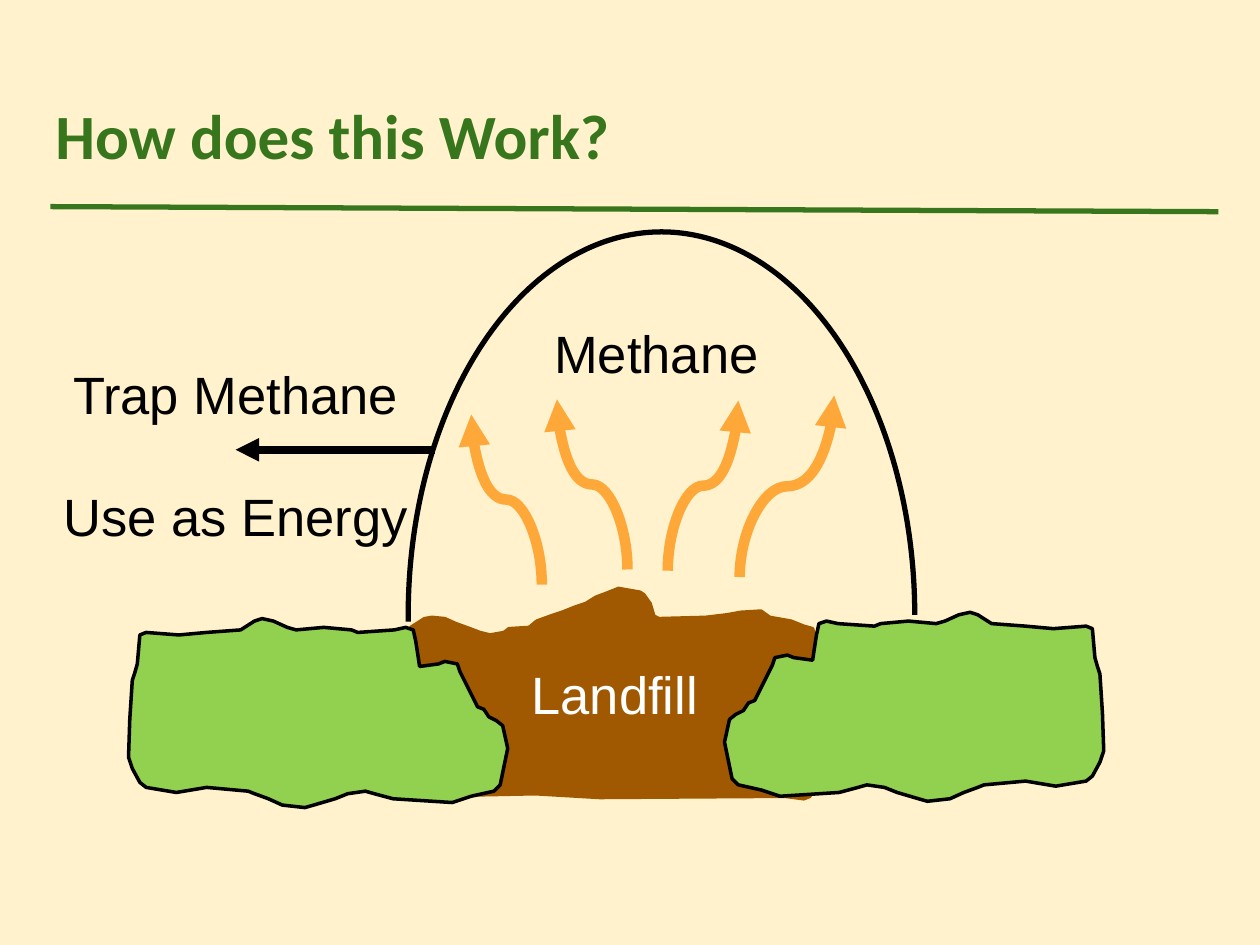
import pptx
import pptx.util
import pptx.dml.color
import pptx.enum.shapes
import pptx.enum.text
import pptx.oxml
import pptx.oxml.ns
from dataclasses import dataclass

Inches, Pt = pptx.util.Inches, pptx.util.Pt
SHAPE = pptx.enum.shapes.MSO_SHAPE
LINE = pptx.enum.shapes.MSO_CONNECTOR
ALIGN = pptx.enum.text.PP_ALIGN
ANCHOR = pptx.enum.text.MSO_ANCHOR


@dataclass(frozen=True)
class Theme:
    back: str = "FFF2CC"
    title: str = "38761D"
    waste: str = "A05900"
    land: str = "92D050"
    gas: str = "FEA83A"
    ink: str = "000000"
    light: str = "FFFFFF"
    title_font: str = "Calibri"
    text_font: str = "Arial"
    title_size: int = 36
    text_size: int = 30


THEME = Theme()

# Outlines, in hundredths of an inch from the top left of their box
WASTE = [
    (2, 31), (13, 24), (19, 23), (29, 24), (38, 28), (49, 32), (57, 35), (65, 37),
    (76, 35), (80, 32), (96, 31), (102, 26), (113, 22), (122, 19), (132, 15),
    (141, 12), (149, 7), (157, 4), (167, 0), (184, 3), (187, 5), (192, 12),
    (195, 22), (199, 24), (236, 23), (253, 21), (264, 19), (280, 18), (287, 23),
    (304, 26), (314, 30), (321, 32), (325, 46), (327, 53), (327, 115), (325, 118),
    (323, 145), (319, 165), (314, 167), (299, 165), (152, 166), (101, 163),
    (51, 164), (33, 164), (25, 162), (19, 155), (14, 144), (11, 132), (8, 114),
    (4, 103), (2, 89), (1, 44)]
LAND = [
    (7, 36), (9, 13), (14, 11), (40, 13), (62, 11), (89, 9), (100, 2), (106, 0),
    (115, 2), (126, 7), (133, 9), (155, 7), (177, 9), (182, 11), (211, 9),
    (220, 7), (226, 9), (228, 18), (230, 31), (231, 38), (246, 36), (251, 34),
    (261, 36), (263, 42), (270, 56), (277, 70), (282, 72), (286, 78), (292, 81),
    (297, 85), (301, 103), (295, 132), (290, 137), (272, 141), (257, 146),
    (210, 143), (195, 139), (188, 137), (174, 139), (164, 143), (147, 148),
    (140, 150), (122, 148), (111, 143), (100, 139), (95, 137), (62, 134),
    (38, 138), (14, 134), (9, 130), (3, 119), (0, 110), (1, 80), (3, 49), (5, 43)]
LAND_WIDTH = 301


def rgb(value):
    return pptx.dml.color.RGBColor.from_string(value)


def add_run(p, text, color, font=THEME.text_font, size=THEME.text_size, bold=False):
    r = p.add_run()
    r.text = text
    r.font.name, r.font.size, r.font.bold = font, Pt(size), bold
    r.font.color.rgb = rgb(color)


def add_line(shapes, kind, start, end, color, width, arrow=False):
    s = shapes.add_connector(kind, *map(Inches, start + end))
    s.line.color.rgb = rgb(color)
    s.line.width = Pt(width)
    if arrow:
        tail = pptx.oxml.parse_xml(
            '<a:tailEnd %s type="triangle"/>' % pptx.oxml.ns.nsdecls("a"))
        s.line._get_or_add_ln().append(tail)
    s._element.spPr.append(
        pptx.oxml.parse_xml("<a:effectLst %s/>" % pptx.oxml.ns.nsdecls("a")))
    return s


def add_outline(shapes, left, top, points, fill, line):
    spots = [(Inches(left + x / 100), Inches(top + y / 100)) for x, y in points]
    builder = shapes.build_freeform(*spots[0], scale=1.0)
    builder.add_line_segments(spots[1:], close=True)
    s = builder.convert_to_shape()
    s.shadow.inherit = False
    s.fill.solid()
    s.fill.fore_color.rgb = rgb(fill)
    s.line.color.rgb = rgb(line)
    s.line.width = Pt(2)
    return s


def add_label(shapes, box, lines, gap=0):
    tf = shapes.add_textbox(*map(Inches, box)).text_frame
    tf.word_wrap = False
    tf.auto_size = pptx.enum.text.MSO_AUTO_SIZE.SHAPE_TO_FIT_TEXT
    tf.margin_left = tf.margin_right = tf.margin_top = tf.margin_bottom = Inches(0.1)
    for i, text in enumerate(lines):
        p = tf.add_paragraph() if i else tf.paragraphs[0]
        p.alignment = ALIGN.CENTER
        if i:
            p.space_before = Pt(gap)
        add_run(p, text, THEME.ink)


def add_gas_arrow(shapes, start, end):
    """S-curve that leaves and arrives vertically: a level curve, turned."""
    (x1, y1), (x2, y2) = start, end
    cx, cy = (x1 + x2) / 2, (y1 + y2) / 2
    half_h = abs(x2 - x1) / 2
    half_w = (y1 - y2) / 2 * (1 if x2 > x1 else -1)
    s = add_line(shapes, LINE.CURVE, (cx + half_w, cy + half_h),
                 (cx - half_w, cy - half_h), THEME.gas, 6, arrow=True)
    turn = 90 if x2 > x1 else 270
    s._element.spPr.find(pptx.oxml.ns.qn("a:xfrm")).set("rot", str(turn * 60000))


def add_header(slide, left, top, width, height):
    s = slide.shapes.title
    s.left, s.top, s.width, s.height = map(Inches, (left, top, width, height))
    tf = s.text_frame
    tf.margin_left = tf.margin_right = tf.margin_top = tf.margin_bottom = Inches(0.1)
    tf.vertical_anchor = ANCHOR.MIDDLE
    p = tf.paragraphs[0]
    p.alignment = ALIGN.LEFT
    add_run(p, "How does this Work?", THEME.title, THEME.title_font,
            THEME.title_size, bold=True)
    # Rule under the title
    add_line(slide.shapes, LINE.STRAIGHT, (left + 0.06, top + 0.99),
             (left + width + 0.01, top + 1.03), THEME.title, 3)


def add_landfill(slide, left, top):
    shapes = slide.shapes.add_group_shape().shapes
    # Waste between two mirrored banks of land
    s = add_outline(shapes, left + 2.22, top + 2.22, WASTE, THEME.waste, THEME.waste)
    s.text_frame.vertical_anchor = ANCHOR.MIDDLE
    p = s.text_frame.paragraphs[0]
    p.alignment = ALIGN.CENTER
    add_run(p, "Landfill", THEME.light)
    mirrored = [(LAND_WIDTH - x, y) for x, y in LAND]
    add_outline(shapes, left, top + 2.46, LAND, THEME.land, THEME.ink)
    add_outline(shapes, left + 4.73, top + 2.41, mirrored, THEME.land, THEME.ink)
    # Rising gas: start, then run and rise
    for x, y, run, rise in [(3.28, 2.19, -0.56, 1.35), (4.85, 2.13, 0.75, 1.44),
                            (3.96, 2.07, -0.56, 1.35), (4.28, 2.08, 0.56, 1.35)]:
        x, y = left + x, top + y
        add_gas_arrow(shapes, (x, y), (x + run, y - rise))
    add_label(shapes, (left + 3.15, top, 2.08, 0.67), ["Methane"])


def add_dome(slide, left, top, width, height):
    s = slide.shapes.add_shape(SHAPE.ARC, *map(Inches, (left, top, width, height)))
    s.adjustments[0], s.adjustments[1] = 107.08, 0
    s.shadow.inherit = False
    s.fill.background()
    s.line.color.rgb = rgb(THEME.ink)
    s.line.width = Pt(3)


def add_capture(slide, left, top, width, height):
    add_label(slide.shapes, (left, top, width, height),
              ["Trap Methane", "Use as Energy"], gap=34)
    y = top + 0.8
    add_line(slide.shapes, LINE.STRAIGHT, (left + 3.06, y), (left + 1.48, y),
             THEME.ink, 4.5, arrow=True)


def main():
    prs = pptx.Presentation()
    prs.slide_width, prs.slide_height = Inches(10), Inches(7.5)
    slide = prs.slides.add_slide(prs.slide_layouts[5])
    slide.background.fill.solid()
    slide.background.fill.fore_color.rgb = rgb(THEME.back)
    add_header(slide, 0.34, 0.65, 9.32, 0.83)
    add_landfill(slide, 1.02, 2.45)
    add_dome(slide, 3.24, 1.84, 4.02, 6.08)
    add_capture(slide, 0.39, 2.77, 2.96, 1.62)
    prs.save("out.pptx")


if __name__ == "__main__":
    main()
